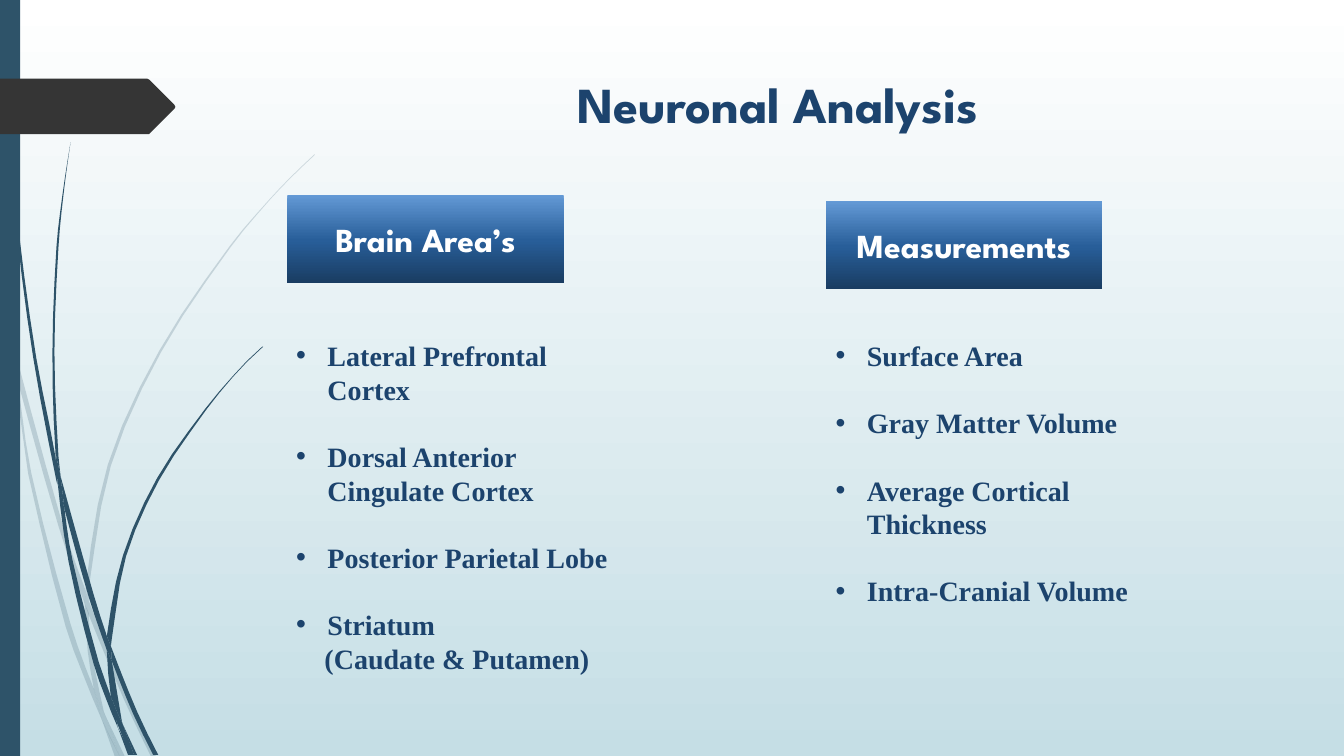
import math
from dataclasses import dataclass

import pptx
import pptx.dml.color
import pptx.enum.shapes
import pptx.enum.text
import pptx.oxml.ns
import pptx.util

PX = 9144  # EMU per px, at 100 px to the inch
Point = tuple[float, float]
Stops = tuple[tuple[int, str], ...]
SHAPE = pptx.enum.shapes.MSO_SHAPE
ALIGN = pptx.enum.text.PP_ALIGN
qn = pptx.oxml.ns.qn


@dataclass(frozen=True)
class Theme:
    teal: str = "2E5369"
    tag: str = "353535"
    ink: str = "1C436D"
    white: str = "FFFFFF"
    sky: Stops = ((0, "FFFFFF"), (100, "C5DEE5"))
    box: Stops = ((0, "649AD6"), (52, "285E99"), (100, "193C61"))
    head_font: str = "League Spartan"
    body_font: str = "Times New Roman"
    title_pt: int = 36
    head_pt: int = 24
    body_pt: int = 20
    line_pt: int = 24
    indent: int = 31
    note_indent: int = 28


@dataclass(frozen=True)
class Blade:
    """Part of a grass stalk: one edge, then the other edge back."""
    down: list[Point]
    up: list[Point]


@dataclass(frozen=True)
class Column:
    left: int
    head_left: int
    head_top: int
    head: str
    items: list[str]
    note: str = ""


T = Theme()

FADED = [
    Blade([(0, 282), (9, 322), (11, 350)], [(10, 344), (0, 299)]),
    Blade([(14, 345), (62, 520), (85, 586)], [(84, 599), (58, 522), (17, 376)]),
    Blade([(88, 596), (127, 692), (155, 751)], [(150, 751), (123, 694), (88, 610)]),
    Blade([(105, 711), (124, 751)], [(119, 751)]),
    Blade([(11, 350), (17, 376), (31, 469), (70, 619), (93, 683)],
          [(99, 707), (101, 714), (92, 693), (65, 621), (28, 470)]),
    Blade([(84, 599), (87, 646), (93, 683), (96, 692), (105, 711)], [(103, 706), (91, 646), (88, 608)]),
    Blade([(312, 153), (289, 175), (268, 197), (228, 244), (158, 348), (107, 461), (85, 584)],
          [(88, 596), (88, 584), (110, 462), (160, 349), (229, 245), (268, 198), (290, 175), (312, 154)]),
    Blade([(101, 714), (114, 751)], [(119, 751)]),
    Blade([(85, 586), (84, 599)], [(88, 610), (88, 596)]),
    Blade([(93, 683), (99, 707), (101, 714), (119, 751)], [(105, 711), (96, 692)]),
]
DARK = [
    Blade([(3, 0), (4, 48), (7, 110), (17, 233), (33, 355), (56, 477)],
          [(57, 481), (55, 453), (36, 355), (19, 232), (8, 109), (5, 48), (4, 0)]),
    Blade([(60, 472), (93, 590), (106, 631)], [(106, 645), (88, 592), (64, 505)]),
    Blade([(110, 641), (136, 706), (157, 749)], [(152, 749), (132, 708), (111, 656)]),
    Blade([(57, 477), (68, 557), (93, 659), (111, 708), (117, 722)],
          [(116, 717), (110, 691), (98, 657), (72, 556), (64, 505)]),
    Blade([(70, 141), (62, 193), (56, 245), (52, 349), (55, 449), (60, 472)],
          [(58, 453), (54, 349), (58, 245), (63, 193), (70, 141)]),
    Blade([(122, 719), (136, 749)], [(133, 749)]),
    Blade([(55, 449), (57, 477), (64, 505)], [(60, 472)]),
    Blade([(260, 344), (245, 358), (231, 373), (204, 405), (156, 474), (122, 551), (106, 631)],
          [(110, 641), (111, 633), (125, 552), (158, 476), (205, 406), (231, 374), (245, 359), (261, 344)]),
    Blade([(117, 722), (127, 749)], [(131, 749)]),
    Blade([(106, 645), (110, 691), (116, 706), (122, 719)], [(121, 716), (111, 656)]),
    Blade([(106, 631), (106, 645)], [(111, 656), (110, 641)]),
    Blade([(110, 691), (116, 717), (130, 749)], [(133, 749), (122, 719), (116, 706)]),
]
TAG = [(0, 78), (146, 78), (148, 79), (173, 104), (174, 106), (173, 108), (148, 133), (0, 133)]

COLUMNS = [
    Column(819, 819, 199, "Measurements",
           ["Surface Area", "Gray Matter Volume", "Average Cortical Thickness",
            "Intra-Cranial Volume"]),
    Column(284, 285, 193, "Brain Area’s",
           ["Lateral Prefrontal Cortex", "Dorsal Anterior Cingulate Cortex",
            "Posterior Parietal Lobe", "Striatum"], "(Caudate & Putamen)"),
]


def rgb(color: str) -> pptx.dml.color.RGBColor:
    return pptx.dml.color.RGBColor.from_string(color)


def px(*lengths: int) -> list[int]:
    return [n * PX for n in lengths]


def smooth(knots: list[Point]) -> list[Point]:
    """Points on a smooth curve through the knots, closer on longer spans."""
    spans = [math.dist(a, b) for a, b in zip(knots, knots[1:])]
    last = len(spans)

    def slope(i: int, axis: int) -> float:
        a, b = max(i - 1, 0), min(i + 1, last)
        chord = (knots[b][axis] - knots[a][axis]) / sum(spans[a:b])
        if 0 < i < last or last == 1:
            return chord
        return 1.5 * chord - 0.5 * slope(1 if i == 0 else last - 1, axis)

    def at(i: int, u: float, axis: int) -> float:
        ease = 3 * u**2 - 2 * u**3
        pull = (u**3 - 2 * u**2 + u) * slope(i, axis) + (u**3 - u**2) * slope(i + 1, axis)
        return (1 - ease) * knots[i][axis] + ease * knots[i + 1][axis] + spans[i] * pull

    curve = []
    for i, span in enumerate(spans):
        steps = min(3, 1 + int(span / 25))
        curve += [(at(i, k / steps, 0), at(i, k / steps, 1)) for k in range(steps)]
    return curve + [knots[-1]]


def paint(sp, color: str, opacity: int = 100) -> None:
    sp.shadow.inherit = False
    sp.line.fill.background()
    sp.fill.solid()
    sp.fill.fore_color.rgb = rgb(color)
    if opacity < 100:
        clr = sp.element.spPr.find(".//" + qn("a:srgbClr"))
        clr.append(clr.makeelement(qn("a:alpha"), {"val": str(opacity * 1000)}))


def shade(fill, element, stops: Stops) -> None:
    """Gradient from top to bottom."""
    fill.gradient()
    fill.gradient_angle = 270
    lst = element.find(".//" + qn("a:gsLst"))
    for gs in list(lst):
        lst.remove(gs)
    for pos, color in stops:
        gs = lst.makeelement(qn("a:gs"), {"pos": str(pos * 1000)})
        gs.append(gs.makeelement(qn("a:srgbClr"), {"val": color}))
        lst.append(gs)


def add_run(p, text: str, font: str, size: int, color: str) -> None:
    r = p.add_run()
    r.text = text
    r.font.name, r.font.size, r.font.bold = font, pptx.util.Pt(size), True
    r.font.color.rgb = rgb(color)


def add_outline(s, outline: list[Point], color: str, opacity: int = 100) -> None:
    pts = [(round(x * PX), round(y * PX)) for x, y in outline]
    fb = s.shapes.build_freeform(*pts[0], scale=1.0)
    fb.add_line_segments(pts[1:], close=True)
    paint(fb.convert_to_shape(), color, opacity)


def add_text(s, left: int, top: int, width: int, height: int):
    tf = s.shapes.add_textbox(*px(left, top, width, height)).text_frame
    tf.word_wrap = True
    return tf


def indent(p, left: int, bullet: bool) -> None:
    pPr = p._p.get_or_add_pPr()
    pPr.set("marL", str(left * PX))
    pPr.set("indent", str(-left * PX if bullet else 0))
    if bullet:
        pPr.append(pPr.makeelement(qn("a:buFont"), {"typeface": "Arial"}))
        pPr.append(pPr.makeelement(qn("a:buChar"), {"char": "•"}))


def add_column(s, col: Column) -> None:
    # Heading box
    sp = s.shapes.add_shape(SHAPE.RECTANGLE, *px(col.head_left, col.head_top, 274, 88))
    paint(sp, T.white)
    shade(sp.fill, sp.element, T.box)
    p = sp.text_frame.paragraphs[0]
    p.alignment = ALIGN.CENTER
    add_run(p, col.head, T.head_font, T.head_pt, T.white)
    # Bulleted list, with an optional note under the last item
    tf = add_text(s, col.left, 331, 344, 380)
    for i, text in enumerate(col.items + [col.note] * bool(col.note)):
        bullet = i < len(col.items)
        p = tf.add_paragraph() if i else tf.paragraphs[0]
        p.line_spacing = pptx.util.Pt(T.line_pt)
        p.space_before = pptx.util.Pt(T.line_pt if i and bullet else 0)
        indent(p, T.indent if bullet else T.note_indent, bullet)
        add_run(p, text, T.body_font, T.body_pt, T.ink)


def main() -> None:
    prs = pptx.Presentation()
    prs.slide_width, prs.slide_height = px(1333, 750)
    s = prs.slides.add_slide(prs.slide_layouts[6])
    shade(s.background.fill, s.element, T.sky)
    # Grass, side bar and tag
    for blades, opacity in ((FADED, 20), (DARK, 100)):
        for blade in blades:
            add_outline(s, smooth(blade.down) + smooth(blade.up), T.teal, opacity)
    paint(s.shapes.add_shape(SHAPE.RECTANGLE, *px(0, 0, 20, 750)), T.teal)
    add_outline(s, TAG, T.tag)
    # Title
    p = add_text(s, 284, 68, 975, 140).paragraphs[0]
    p.alignment = ALIGN.CENTER
    add_run(p, "Neuronal Analysis", T.head_font, T.title_pt, T.ink)
    # Columns
    for col in COLUMNS:
        add_column(s, col)
    prs.save("out.pptx")


if __name__ == "__main__":
    main()
